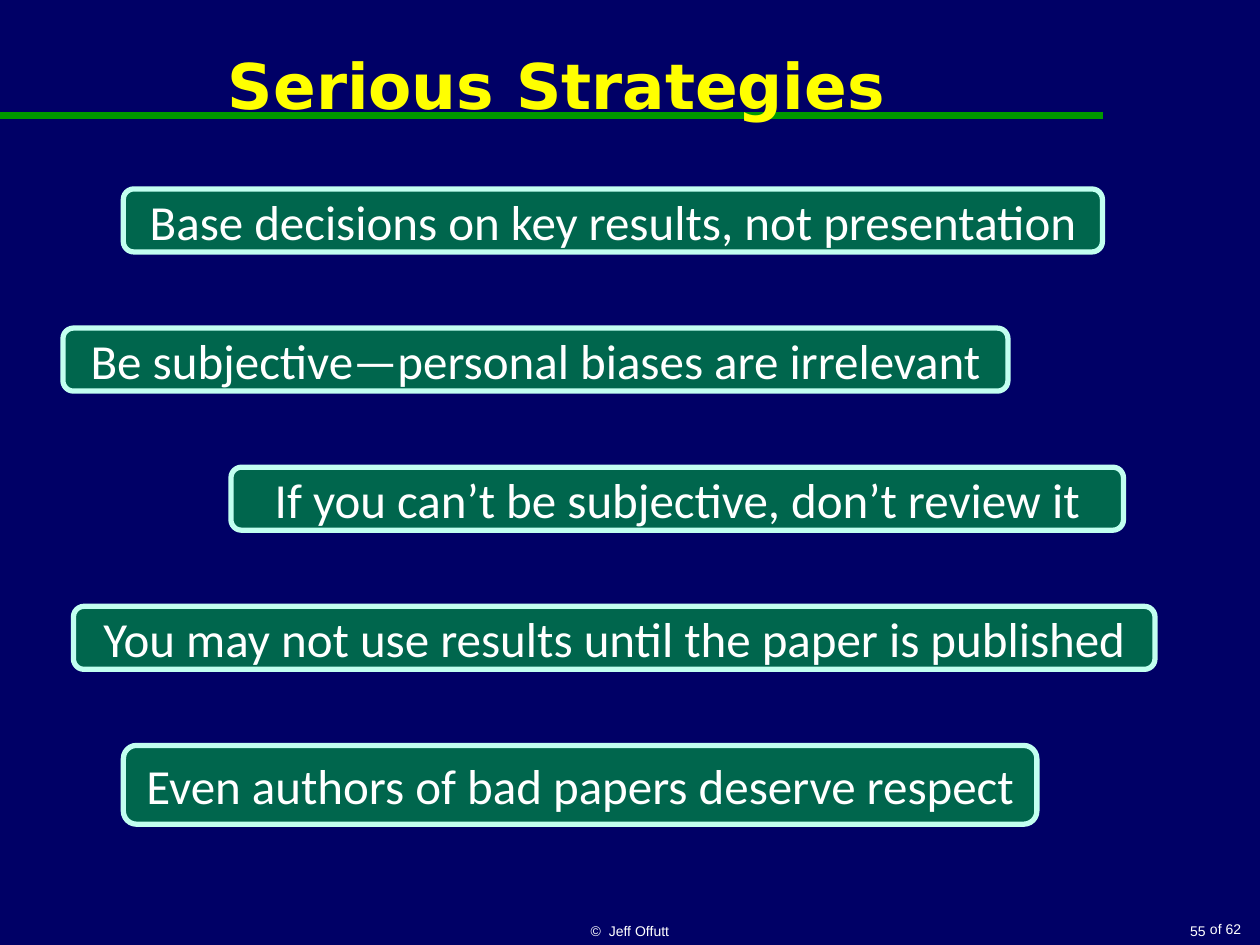
from dataclasses import dataclass

from lxml import etree
from pptx import Presentation
from pptx import util as u
from pptx.dml.color import RGBColor
from pptx.enum import shapes, text
from pptx.oxml.ns import qn


@dataclass(frozen=True)
class Theme:
    background: str = "000066"
    rule: str = "009900"
    title: str = "FFFF00"
    body: str = "FFFFFF"
    pill: str = "00664D"
    outline: str = "C2FFF0"
    title_size: int = 36
    body_size: int = 28
    footer_size: int = 8
    rule_width: float = 4.5
    outline_width: float = 3


THEME = Theme()
COLUMNS, ROWS = 120, 90
WIDTH, HEIGHT = u.Inches(10), u.Inches(7.5)
FIRST_ROW, ROW_STEP = 18, 13.25

TITLE_FONT = {"name": "DejaVu Sans", "size": u.Pt(THEME.title_size), "bold": True}
BODY_FONT = {"name": "Calibri", "size": u.Pt(THEME.body_size)}
FOOTER_FONT = {"name": "Arial", "size": u.Pt(THEME.footer_size)}

STRATEGIES = [
    (11.75, 93.25, 6, "Base decisions on key results, not presentation"),
    (6, 90, 6, "Be subjective—personal biases are irrelevant"),
    (22, 85, 6, "If you can’t be subjective, don’t review it"),
    (7, 103, 6, "You may not use results until the paper is published"),
    (11.75, 87, 7.5, "Even authors of bad papers deserve respect"),
]


def place(column, row, columns, rows):
    return (
        round(WIDTH * column / COLUMNS),
        round(HEIGHT * row / ROWS),
        round(WIDTH * columns / COLUMNS),
        round(HEIGHT * rows / ROWS),
    )


def write(shape, words, font, color, align, anchor, wrap=True):
    frame = shape.text_frame
    frame.word_wrap = wrap
    frame.vertical_anchor = anchor
    paragraph = frame.paragraphs[0]
    paragraph.alignment = align
    run = paragraph.add_run()
    run.text = words
    for name, value in font.items():
        setattr(run.font, name, value)
    run.font.color.rgb = RGBColor.from_string(color)


def add_label(slide, cell, *text_format, **options):
    write(slide.shapes.add_textbox(*place(*cell)), *text_format, **options)


def add_rule(slide, row, columns):
    left, top, width, _ = place(0, row, columns, 0)
    rule = slide.shapes.add_connector(
        shapes.MSO_CONNECTOR.STRAIGHT, left, top, left + width, top
    )
    rule.line.color.rgb = RGBColor.from_string(THEME.rule)
    rule.line.width = u.Pt(THEME.rule_width)
    etree.SubElement(rule._element.spPr, qn("a:effectLst"))


def add_pill(slide, cell, words):
    pill = slide.shapes.add_shape(
        shapes.MSO_SHAPE.ROUNDED_RECTANGLE, *place(*cell)
    )
    pill.shadow.inherit = False
    pill.fill.solid()
    pill.fill.fore_color.rgb = RGBColor.from_string(THEME.pill)
    pill.line.color.rgb = RGBColor.from_string(THEME.outline)
    pill.line.width = u.Pt(THEME.outline_width)
    write(pill, words, BODY_FONT, THEME.body,
          text.PP_ALIGN.CENTER, text.MSO_ANCHOR.MIDDLE)


def add_title(slide, cell, words):
    add_label(slide, cell, words, TITLE_FONT, THEME.title,
              text.PP_ALIGN.CENTER, text.MSO_ANCHOR.MIDDLE)


def add_footer(slide, cell, words, align, anchor=text.MSO_ANCHOR.BOTTOM, wrap=True):
    add_label(slide, cell, words, FOOTER_FONT, THEME.body, align, anchor, wrap=wrap)


def main():
    presentation = Presentation()
    presentation.slide_width, presentation.slide_height = WIDTH, HEIGHT
    slide = presentation.slides.add_slide(presentation.slide_layouts[6])
    slide.background.fill.solid()
    slide.background.fill.fore_color.rgb = RGBColor.from_string(THEME.background)

    add_rule(slide, 11, 105)
    add_footer(slide, (114, 87.1, 5.4, 2.9), "of 62", text.PP_ALIGN.RIGHT,
               text.MSO_ANCHOR.TOP, wrap=False)
    add_title(slide, (1, 0, 104, 16), "Serious Strategies")
    add_footer(slide, (41, 86, 38, 4), "©  Jeff Offutt", text.PP_ALIGN.CENTER)
    add_footer(slide, (95, 86, 21, 4), "55", text.PP_ALIGN.RIGHT)
    for index, (column, columns, rows, words) in enumerate(STRATEGIES):
        row = FIRST_ROW + index * ROW_STEP
        add_pill(slide, (column, row, columns, rows), words)

    presentation.save("out.pptx")


if __name__ == "__main__":
    main()
